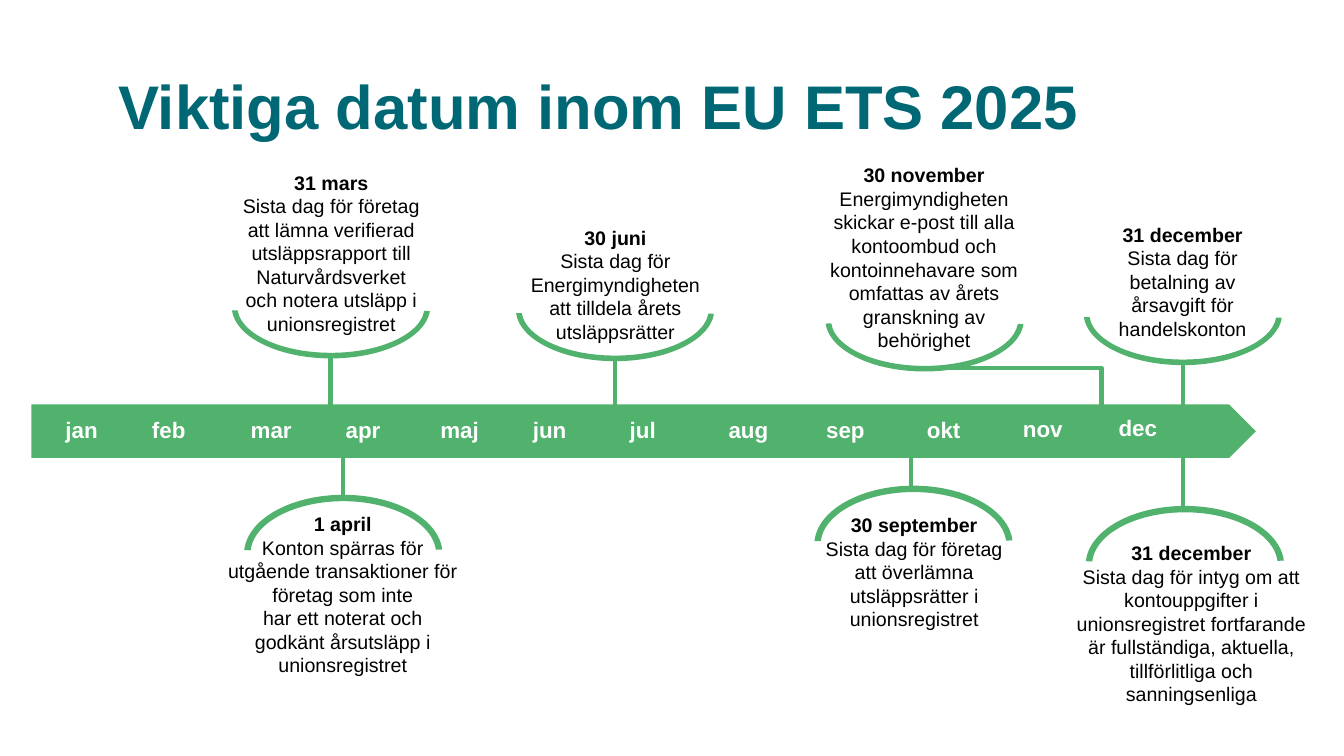
import lxml.etree
import pptx
import pptx.dml.color
import pptx.enum.shapes
import pptx.enum.text
import pptx.oxml.ns
import pptx.util

Cm = pptx.util.Cm
Pt = pptx.util.Pt
qn = pptx.oxml.ns.qn
SHAPES = pptx.enum.shapes.MSO_SHAPE
CONNECTORS = pptx.enum.shapes.MSO_CONNECTOR
ALIGN = pptx.enum.text.PP_ALIGN
AUTO_SIZE = pptx.enum.text.MSO_AUTO_SIZE

COLORS = {"title": "006875", "green": "50B26C", "white": "FFFFFF", "black": "000000"}
FONT = "Arial"
ARC_WIDTH = 5.0

MONTHS = [
    ("jan", 1.4, 10.36), ("feb", 3.58, 10.36), ("mar", 6.07, 10.36),
    ("apr", 8.46, 10.36), ("maj", 10.85, 10.36), ("jun", 13.18, 10.36),
    ("jul", 15.62, 10.36), ("aug", 18.11, 10.36), ("sep", 20.57, 10.36),
    ("okt", 23.11, 10.36), ("nov", 25.53, 10.34), ("dec", 27.94, 10.31),
]

EVENTS = [
    ((5.77, 4.17, 5.16, 4.52), "31 mars",
     ["Sista dag för företag att lämna verifierad utsläppsrapport till "
      "Naturvårdsverket och notera utsläpp i unionsregistret"]),
    ((12.93, 5.56, 5.16, 3.25), "30 juni",
     ["Sista dag för Energimyndigheten att tilldela årets utsläppsrätter"]),
    ((20.09, 3.99, 6.4, 5.13), "30 november",
     ["Energimyndigheten skickar e-post till alla kontoombud och",
      "kontoinnehavare som omfattas av årets granskning av",
      "behörighet"]),
    ((27.25, 5.49, 5.11, 3.25), "31 december",
     ["Sista dag för betalning av årsavgift för handelskonton"]),
    ((5.44, 12.78, 6.4, 4.45), "1 april",
     ["Konton spärras för utgående transaktioner för företag som inte",
      "har ett noterat och",
      "godkänt årsutsläpp i unionsregistret"]),
    ((20.32, 12.8, 5.44, 3.25), "30 september",
     ["Sista dag för företag att överlämna utsläppsrätter i unionsregistret"]),
    ((26.57, 13.51, 6.91, 4.45), "31 december",
     ["Sista dag för intyg om att kontouppgifter i unionsregistret fortfarande",
      "är fullständiga, aktuella, tillförlitliga och sanningsenliga"]),
]

UPPER_ARCS = [(5.84, 6.43), (13.0, 6.5), (20.8, 6.76), (27.31, 6.6)]
LOWER_ARCS = [(6.15, 12.47), (20.52, 12.24), (27.36, 12.75)]
STEMS = [
    (8.33, 8.92, 10.26), (15.49, 9.09, 10.24), (29.82, 9.17, 10.34),
    (8.64, 11.35, 12.57), (22.96, 11.15, 12.32), (29.81, 11.38, 12.85),
]


def rgb(name):
    return pptx.dml.color.RGBColor.from_string(COLORS[name])


def format_paragraph(paragraph, size, color, bold, alignment=ALIGN.LEFT):
    paragraph.alignment = alignment
    font = paragraph.font
    font.name = FONT
    font.size = Pt(size)
    font.bold = bold
    font.color.rgb = rgb(color)


def set_title(slide, text):
    title = slide.shapes.title
    title.left, title.top, title.width, title.height = Cm(2.72), Cm(1.8), Cm(28.83), Cm(3.61)
    frame = title.text_frame
    frame.text = text
    frame.auto_size = AUTO_SIZE.NONE
    frame.vertical_anchor = pptx.enum.text.MSO_ANCHOR.TOP
    paragraph = frame.paragraphs[0]
    paragraph.line_spacing = 0.9
    format_paragraph(paragraph, 44, "title", True)


def add_text(slide, box, lines):
    frame = slide.shapes.add_textbox(*map(Cm, box)).text_frame
    frame.word_wrap = True
    frame.auto_size = AUTO_SIZE.SHAPE_TO_FIT_TEXT
    frame.text = "\n".join(lines)
    return frame.paragraphs


def add_month(slide, name, left, top):
    paragraphs = add_text(slide, (left, top, 1.57, 0.94), [name])
    format_paragraph(paragraphs[0], 16, "white", True)


def add_event(slide, box, date, lines):
    for index, paragraph in enumerate(add_text(slide, box, [date, *lines])):
        format_paragraph(paragraph, 14, "black", index == 0, ALIGN.CENTER)


def add_green_shape(slide, kind, box):
    shape = slide.shapes.add_shape(kind, *map(Cm, box))
    shape.shadow.inherit = False
    shape.fill.solid()
    shape.fill.fore_color.rgb = rgb("green")
    shape.line.fill.background()
    return shape


def add_arc(slide, left, top, height, opens_down):
    arc = add_green_shape(slide, SHAPES.BLOCK_ARC, (left, top, ARC_WIDTH, height))
    for index, value in enumerate((109.48, 214.724, 0.054)):
        arc.adjustments[index] = value
    arc.rotation = 180
    if opens_down:
        arc._element.spPr.find(qn("a:xfrm")).set("flipV", "1")


def add_line(slide, kind, start, end):
    connector = slide.shapes.add_connector(kind, *map(Cm, start + end))
    connector.line.color.rgb = rgb("green")
    connector.line.width = Pt(3)
    properties = connector._element.spPr
    lxml.etree.SubElement(properties, qn("a:effectLst"))
    return properties


def add_november_elbow(slide):
    properties = add_line(slide, CONNECTORS.ELBOW, (23.65, 9.27), (29.18, 10.46))
    adjustments = properties.find(qn("a:prstGeom")).find(qn("a:avLst"))
    lxml.etree.SubElement(adjustments, qn("a:gd"), name="adj1", fmla="val 74300")
    line = properties.find(qn("a:ln"))
    lxml.etree.SubElement(line, qn("a:tailEnd"), type="triangle")


def main():
    presentation = pptx.Presentation()
    presentation.slide_width = Cm(33.87)
    presentation.slide_height = Cm(19.05)
    slide = presentation.slides.add_slide(presentation.slide_layouts[5])

    set_title(slide, "Viktiga datum inom EU ETS 2025")
    add_green_shape(slide, SHAPES.PENTAGON, (0.79, 10.19, 30.86, 1.35))
    for left, top in UPPER_ARCS:
        add_arc(slide, left, top, 2.6, False)
    for left, top in LOWER_ARCS:
        add_arc(slide, left, top, 2.97, True)
    for x, top, bottom in STEMS:
        add_line(slide, CONNECTORS.STRAIGHT, (x, top), (x, bottom))
    add_november_elbow(slide)
    for month in MONTHS:
        add_month(slide, *month)
    for event in EVENTS:
        add_event(slide, *event)

    presentation.save("out.pptx")


if __name__ == "__main__":
    main()
